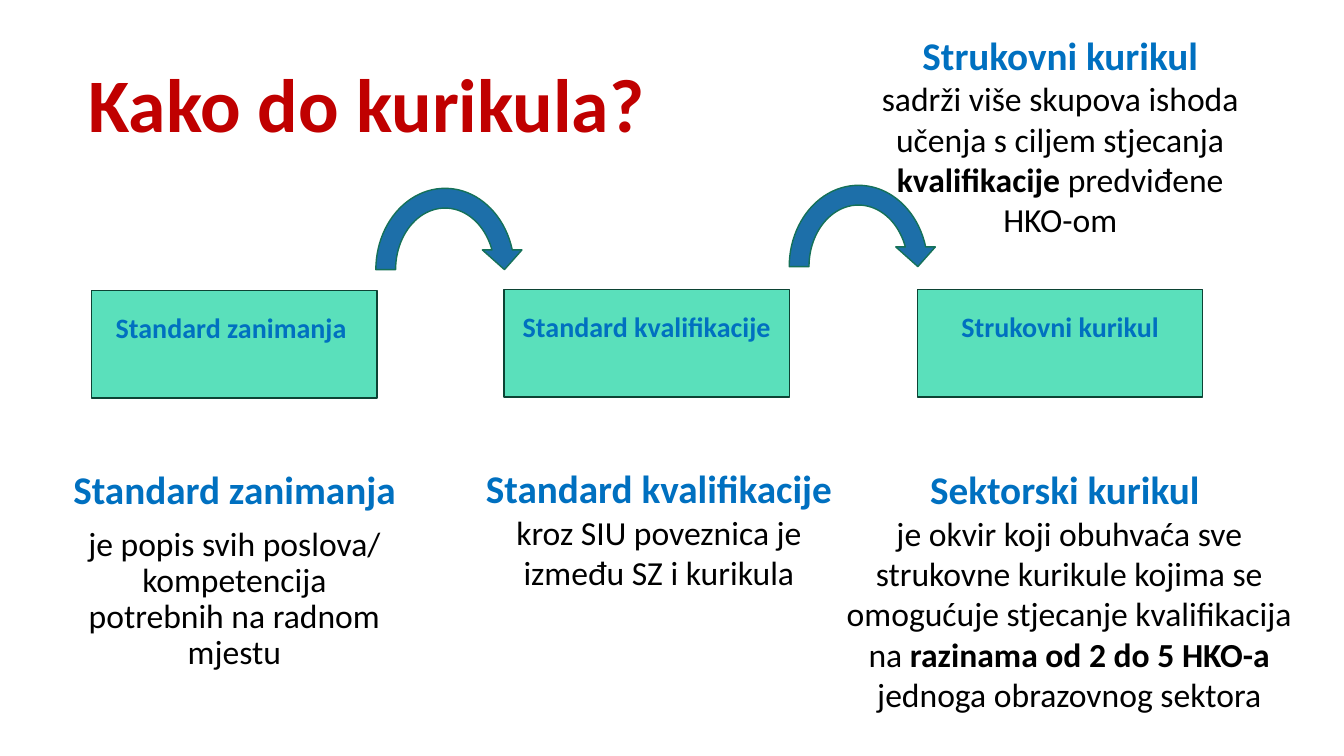
from pptx import Presentation
from pptx.dml.color import RGBColor
from pptx.enum.shapes import MSO_SHAPE
from pptx.enum.text import MSO_ANCHOR, MSO_AUTO_SIZE, PP_ALIGN
from pptx.util import Inches, Pt

RECTANGLE = MSO_SHAPE.RECTANGLE
CIRCULAR_ARROW = MSO_SHAPE.CIRCULAR_ARROW
MIDDLE = MSO_ANCHOR.MIDDLE
CENTER = PP_ALIGN.CENTER
GROW = MSO_AUTO_SIZE.SHAPE_TO_FIT_TEXT

RED = RGBColor(0xC0, 0x00, 0x00)
BLUE = RGBColor(0x00, 0x70, 0xC0)
BLACK = RGBColor(0x00, 0x00, 0x00)
MINT = RGBColor(0x5A, 0xE0, 0xBB)
MINT_EDGE = RGBColor(0x0C, 0x43, 0x34)
ARROW_BLUE = RGBColor(0x1D, 0x6F, 0xA9)
ARROW_EDGE = RGBColor(0x15, 0x71, 0x58)

FONT = "Calibri"
ARROW_ADJUSTMENTS = (0.125, 11.42, 204.58, 108, 0.125)

STEPS = [
    ((0.91, 2.88, 2.83, 1.07), "Standard zanimanja "),
    ((5.0, 2.87, 2.83, 1.07), "Standard kvalifikacije"),
    ((9.1, 2.87, 2.83, 1.07), "Strukovni kurikul"),
]
ARROWS = [(3.63, 1.77, 1.57, 1.81), (7.73, 1.74, 1.57, 1.81)]
DESCRIPTIONS = [
    ((4.67, 4.56, 3.73, 1.36), "Standard kvalifikacije",
     [("kroz SIU poveznica je između SZ i kurikula", False)]),
    ((8.27, 4.57, 4.67, 2.56), "Sektorski kurikul ",
     [("je okvir koji obuhvaća sve strukovne kurikule kojima se "
       "omogućuje stjecanje kvalifikacija na ", False),
      ("razinama od 2 do 5 HKO-a ", True),
      ("jednoga obrazovnog sektora", False)]),
    ((8.57, 0.26, 3.89, 2.16), "Strukovni kurikul",
     [("sadrži više skupova ishoda učenja s ciljem stjecanja ", False),
      ("kvalifikacije ", True),
      ("predviđene HKO-om", False)]),
]


def add_span(para, text, size, color, bold=True):
    para.alignment = CENTER
    span = para.add_run()
    span.text = text
    span.font.name = FONT
    span.font.size = Pt(size)
    span.font.bold = bold
    span.font.color.rgb = color


def add_text_frame(page, box):
    frame = page.shapes.add_textbox(*map(Inches, box)).text_frame
    frame.word_wrap = True
    return frame


def add_title(page, box, text):
    frame = add_text_frame(page, box)
    frame.vertical_anchor = MIDDLE
    para = frame.paragraphs[0]
    para.line_spacing = 0.9
    add_span(para, text, 54, RED)


def add_description(page, box, heading, spans, grow=True):
    frame = add_text_frame(page, box)
    if grow:
        frame.auto_size = GROW
    add_span(frame.paragraphs[0], heading, 28, BLUE)
    body = frame.add_paragraph()
    for text, bold in spans:
        add_span(body, text, 24, BLACK, bold)
    if not grow:
        for para in frame.paragraphs:
            para.line_spacing = 0.9
            para.space_before = Pt(10)


def add_filled_shape(page, kind, box, fill, edge):
    shape = page.shapes.add_shape(kind, *map(Inches, box))
    shape.shadow.inherit = False
    shape.fill.solid()
    shape.fill.fore_color.rgb = fill
    shape.line.color.rgb = edge
    shape.line.width = Pt(1)
    return shape


def add_arrow(page, box):
    arrow = add_filled_shape(page, CIRCULAR_ARROW, box, ARROW_BLUE, ARROW_EDGE)
    for index, value in enumerate(ARROW_ADJUSTMENTS):
        arrow.adjustments[index] = value


def add_step(page, box, label):
    step = add_filled_shape(page, RECTANGLE, box, MINT, MINT_EDGE)
    frame = step.text_frame
    frame.word_wrap = True
    frame.vertical_anchor = MIDDLE
    frame.margin_bottom = Inches(0.39)
    add_span(frame.paragraphs[0], label, 20, BLUE)


def main():
    deck = Presentation()
    deck.slide_width = Inches(13.33)
    deck.slide_height = Inches(7.5)
    page = deck.slides.add_slide(deck.slide_layouts[6])

    add_title(page, (-2.11, 0.35, 11.49, 1.44), "Kako do kurikula?")
    add_description(
        page, (0.61, 4.62, 3.43, 2.49), "Standard zanimanja ",
        [("je popis svih poslova/ kompetencija potrebnih na radnom mjestu", False)],
        grow=False)
    for box, heading, spans in DESCRIPTIONS:
        add_description(page, box, heading, spans)
    for box in ARROWS:
        add_arrow(page, box)
    for box, label in STEPS:
        add_step(page, box, label)

    deck.save("out.pptx")


if __name__ == "__main__":
    main()
